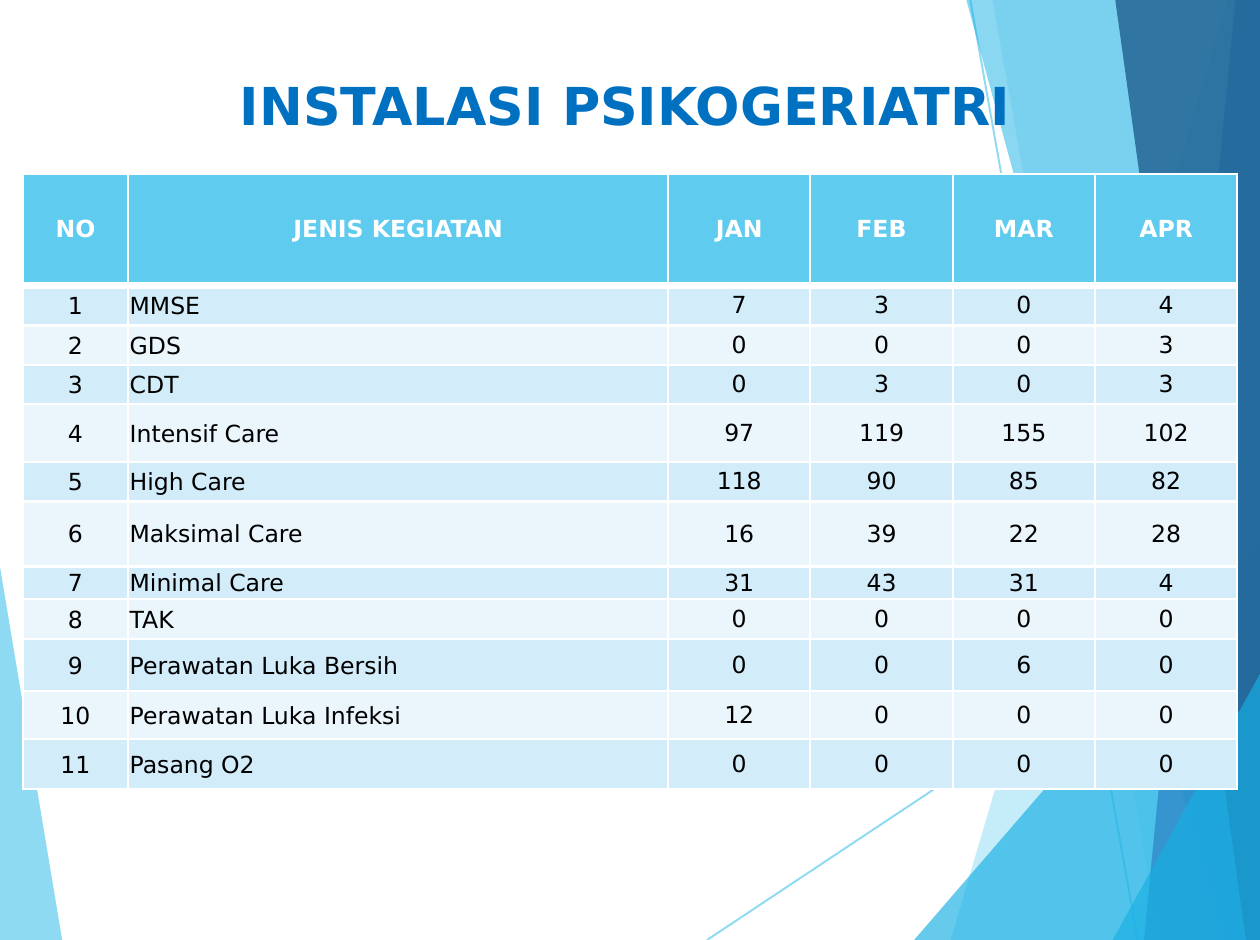
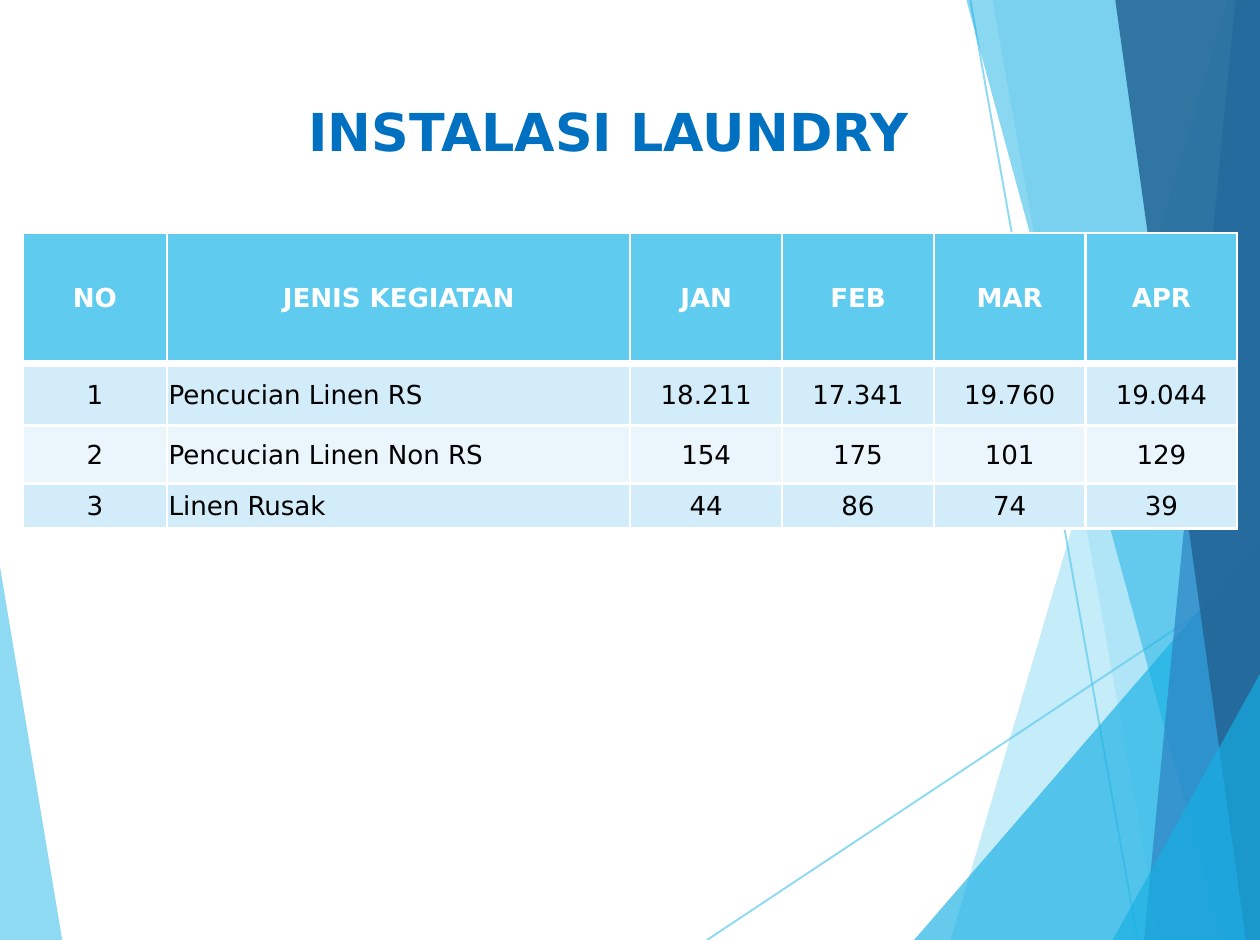
import dataclasses

import pptx
import pptx.dml.color
import pptx.enum.shapes
import pptx.enum.text
import pptx.oxml
import pptx.oxml.ns
import pptx.util
from lxml import etree

Pt = pptx.util.Pt
qn = pptx.oxml.ns.qn


@dataclasses.dataclass(frozen=True)
class Theme:
    """Colours, font and type sizes shared by the slides."""

    font: str = "DejaVu Sans"
    title: str = "0070C0"
    title_size: float = 20
    sky: str = "5FCBEF"
    cyan: str = "17B0E4"
    blue: str = "2E83C3"
    navy: str = "226292"
    row_odd: str = "D2ECF9"
    row_even: str = "EAF6FC"
    white: str = "FFFFFF"
    black: str = "000000"


THEME = Theme()
WIDTH, HEIGHT = 482.4, 360
EDGE = 483
TABLE_LEFT, TABLE_WIDTH = 8.8, 465
HEADINGS = ("NO", "JENIS KEGIATAN", "JAN", "FEB", "MAR", "APR")

RAYS = [((270.7, 360), (483.1, 218.9)), ((371.5, 0), (435.6, 360))]
LEFT_FACET = ([(-0.7, 211), (23.8, 360.7), (-0.7, 360)], THEME.sky, 70)
RIGHT_FACETS = [
    ([(470.2, 0), (363.6, 360), (EDGE, 360), (EDGE, 0)], THEME.sky, 36),
    ([(380.2, 0), (443.5, 360), (EDGE, 360), (EDGE, 0)], THEME.sky, 20),
    ([(349.9, 360), (EDGE, 205.9), (EDGE, 360)], THEME.cyan, 66),
    ([(370.1, 0), (468, 360), (EDGE, 360), (EDGE, 0)], THEME.cyan, 50),
    ([(473, 0), (437.8, 360), (EDGE, 360), (EDGE, 0)], THEME.blue, 70),
    ([(427, 0), (476.6, 360), (EDGE, 360), (EDGE, 0)], THEME.navy, 82),
    ([(425.5, 360), (EDGE, 257), (EDGE, 360)], THEME.cyan, 66),
]

PSYCHOGERIATRIC_ROWS = [
    ("MMSE", "7", "3", "0", "4"),
    ("GDS", "0", "0", "0", "3"),
    ("CDT", "0", "3", "0", "3"),
    ("Intensif Care", "97", "119", "155", "102"),
    ("High Care", "118", "90", "85", "82"),
    ("Maksimal Care", "16", "39", "22", "28"),
    ("Minimal Care", "31", "43", "31", "4"),
    ("TAK", "0", "0", "0", "0"),
    ("Perawatan Luka Bersih", "0", "0", "6", "0"),
    ("Perawatan Luka Infeksi", "12", "0", "0", "0"),
    ("Pasang O2", "0", "0", "0", "0"),
]
PSYCHOGERIATRIC_HEIGHTS = [42.9, 15.2, 15.2, 15, 22.2, 15, 24.9, 12.6, 15.3, 19.9, 18.4, 19.1]
LAUNDRY_ROWS = [
    ("Pencucian Linen RS", "18.211", "17.341", "19.760", "19.044"),
    ("Pencucian Linen Non RS", "154", "175", "101", "129"),
    ("Linen Rusak", "44", "86", "74", "39"),
]
LAUNDRY_HEIGHTS = [50.1, 23.7, 22.2, 17.2]


def rgb(colour):
    """Return a colour object for a hex string."""
    return pptx.dml.color.RGBColor.from_string(colour)


def set_opacity(shape, percent):
    """Make the colour of a shape partly transparent."""
    for colour in shape.element.iter(qn("a:srgbClr")):
        etree.SubElement(colour, qn("a:alpha")).set("val", str(percent * 1000))


def add_facet(slide, corners, colour, opacity):
    """Draw one translucent polygon of the backdrop."""
    builder = slide.shapes.build_freeform(*corners[0], scale=Pt(1))
    builder.add_line_segments(corners[1:], close=True)
    facet = builder.convert_to_shape()
    facet.shadow.inherit = False
    facet.fill.solid()
    facet.fill.fore_color.rgb = rgb(colour)
    facet.line.fill.background()
    set_opacity(facet, opacity)
    return facet


def add_ray(slide, start, end):
    """Draw one thin translucent line of the backdrop."""
    ray = slide.shapes.add_connector(
        pptx.enum.shapes.MSO_CONNECTOR.STRAIGHT, *(Pt(value) for value in start + end))
    ray.line.color.rgb = rgb(THEME.sky)
    ray.line.width = Pt(0.75)
    set_opacity(ray, 70)
    etree.SubElement(ray.element.spPr, qn("a:effectLst"))
    return ray


def move_backdrop_to_layout(slide, layout):
    """Build the backdrop and place it behind the layout title."""
    backdrop = [add_facet(slide, *LEFT_FACET)]
    backdrop += [add_ray(slide, *ray) for ray in RAYS]
    backdrop += [add_facet(slide, *facet) for facet in RIGHT_FACETS]
    for position, part in enumerate(backdrop, start=2):
        layout.shapes.element.insert(position, part.element)


def add_run(paragraph, text, size, colour, bold):
    """Add one formatted run."""
    run = paragraph.add_run()
    run.text = text
    run.font.name = THEME.font
    run.font.size = Pt(size)
    run.font.bold = bold
    run.font.color.rgb = rgb(colour)


def set_title(slide, text, box, gap_below):
    """Place the title so that its line rests above the given gap."""
    title = slide.shapes.title
    title.left, title.top, title.width, title.height = (Pt(value) for value in box)
    frame = title.text_frame
    frame.auto_size = pptx.enum.text.MSO_AUTO_SIZE.NONE
    frame.word_wrap = True
    frame.vertical_anchor = pptx.enum.text.MSO_ANCHOR.BOTTOM
    frame.margin_top = 0
    frame.margin_bottom = Pt(gap_below)
    paragraph = frame.paragraphs[0]
    paragraph.alignment = pptx.enum.text.PP_ALIGN.CENTER
    add_run(paragraph, text, THEME.title_size, THEME.title, True)


def set_borders(cell, top, bottom):
    """Give a cell white borders, placed before its fill."""
    properties = cell._tc.get_or_add_tcPr()
    widths = {"a:lnL": 1, "a:lnR": 1, "a:lnT": top, "a:lnB": bottom}
    for position, (tag, width) in enumerate(widths.items()):
        border = etree.Element(qn(tag), w=str(Pt(width)))
        fill = etree.SubElement(border, qn("a:solidFill"))
        etree.SubElement(fill, qn("a:srgbClr")).set("val", THEME.white)
        properties.insert(position, border)


def format_cell(cell, text, row, column, size, month_inset):
    """Fill one cell according to its row and column."""
    header = row == 0
    inset = month_inset if column > 1 else 0.7
    cell.margin_left = cell.margin_right = Pt(7.2 if header else inset)
    cell.margin_top = Pt(3.6 if header else inset)
    cell.margin_bottom = Pt(3.6 if header else 0)
    cell.vertical_anchor = pptx.enum.text.MSO_ANCHOR.MIDDLE
    band = THEME.row_odd if row % 2 else THEME.row_even
    cell.fill.solid()
    cell.fill.fore_color.rgb = rgb(THEME.sky if header else band)
    set_borders(cell, top=3 if row == 1 else 1, bottom=3 if header else 1)
    paragraph = cell.text_frame.paragraphs[0]
    align = pptx.enum.text.PP_ALIGN
    paragraph.alignment = align.LEFT if column == 1 and not header else align.CENTER
    add_run(paragraph, text, size, THEME.white if header else THEME.black, header)


def add_activity_table(slide, top, activities, heights, number_width, month_width, size, month_inset):
    """Add the numbered table of activities per month."""
    rows = [HEADINGS] + [(str(number), *activity) for number, activity in enumerate(activities, 1)]
    name_width = TABLE_WIDTH - number_width - 4 * month_width
    widths = [number_width, name_width] + [month_width] * 4
    table = slide.shapes.add_table(
        len(rows), len(widths), Pt(TABLE_LEFT), Pt(top), Pt(TABLE_WIDTH), Pt(sum(heights))).table
    for column, width in zip(table.columns, widths):
        column.width = Pt(width)
    for row, height in zip(table.rows, heights):
        row.height = Pt(height)
    for row, texts in enumerate(rows):
        for column, text in enumerate(texts):
            format_cell(table.cell(row, column), text, row, column, size, month_inset)


def main():
    """Build both slides and save them."""
    deck = pptx.Presentation()
    deck.slide_width, deck.slide_height = Pt(WIDTH), Pt(HEIGHT)
    layout = deck.slide_layouts.get_by_name("Title Only")
    for placeholder in list(layout.placeholders)[1:]:
        layout.shapes.element.remove(placeholder.element)

    psychogeriatric = deck.slides.add_slide(layout)
    move_backdrop_to_layout(psychogeriatric, layout)
    set_title(psychogeriatric, "INSTALASI PSIKOGERIATRI", (20.2, 0, 438.5, 52), 0)
    add_activity_table(psychogeriatric, 66.6, PSYCHOGERIATRIC_ROWS, PSYCHOGERIATRIC_HEIGHTS,
                       number_width=40.2, month_width=54.5, size=9, month_inset=0)

    laundry = deck.slides.add_slide(layout)
    set_title(laundry, "INSTALASI LAUNDRY", (65.5, 10, 334.8, 69), 17)
    add_activity_table(laundry, 89.2, LAUNDRY_ROWS, LAUNDRY_HEIGHTS,
                       number_width=55.1, month_width=58.1, size=10, month_inset=0.7)

    deck.save("out.pptx")


if __name__ == "__main__":
    main()
